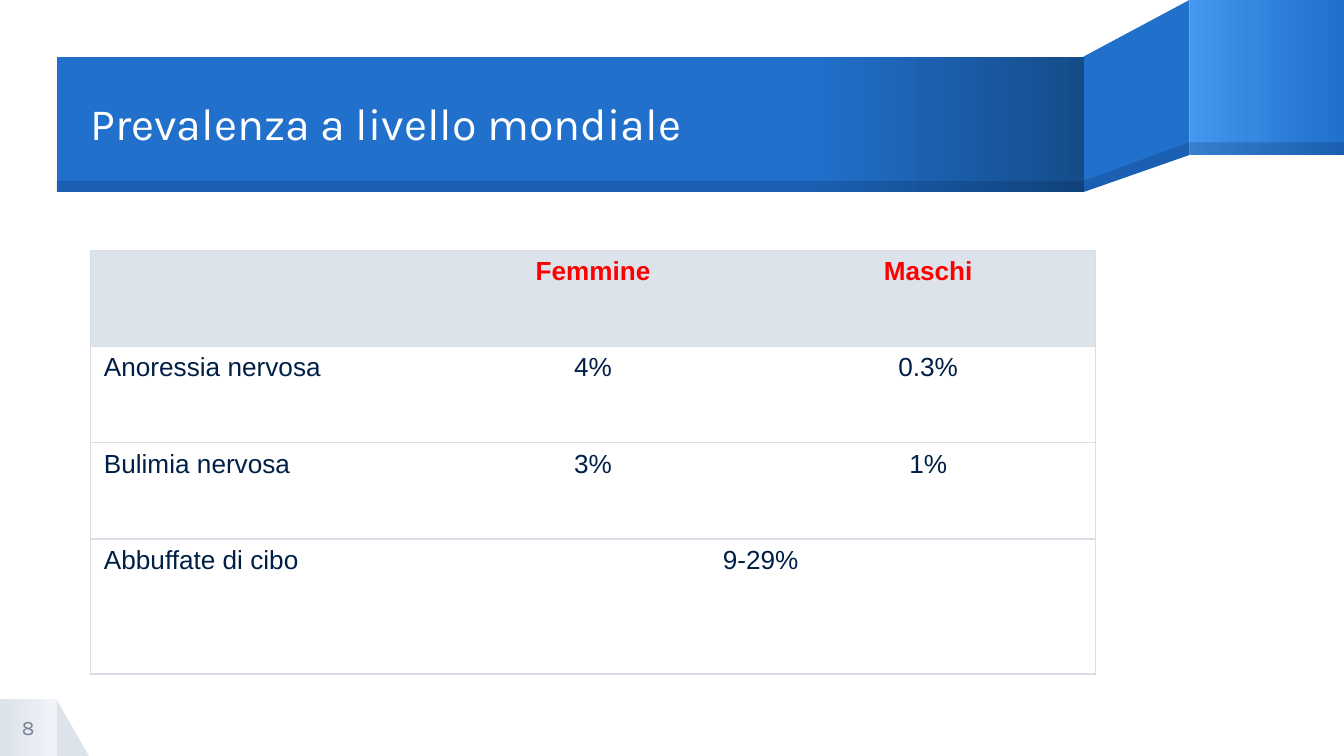
from dataclasses import dataclass

from lxml import etree
from pptx import Presentation
from pptx import util as u
from pptx.dml.color import RGBColor
from pptx.enum import shapes, text
from pptx.oxml import ns

WHITE = RGBColor(0xFF, 0xFF, 0xFF)
BLUE = RGBColor(0x21, 0x70, 0xCC)
LIGHT_BLUE = RGBColor(0x43, 0x97, 0xEE)
DARK_BLUE = RGBColor(0x15, 0x4C, 0x8A)
NAVY = RGBColor(0x00, 0x1F, 0x46)
RED = RGBColor(0xFF, 0x00, 0x00)
GREY = RGBColor(0xDD, 0xE3, 0xEB)
PALE_GREY = RGBColor(0xF0, 0xF3, 0xF7)
RULE_GREY = RGBColor(0xD8, 0xDE, 0xE6)
NUMBER_GREY = RGBColor(0x74, 0x83, 0x94)

# Ribbon guides, in centimetres
PAGE_WIDTH, PAGE_HEIGHT = 25.4, 14.29
MARGIN = 1.07
FOLD_LEFT, FOLD_RIGHT = 20.48, 22.48
BAND_BOTTOM, TAB_BOTTOM = 3.63, 2.93
BAND_EDGE, TAB_EDGE = 3.42, 2.69
FOOT_TOP = PAGE_HEIGHT - MARGIN


@dataclass
class Paint:
    stops: list[tuple[int, RGBColor]]  # percent, colour; one stop means solid
    alpha: int = 100


@dataclass
class Panel:
    corners: list[tuple[float, float]]
    paint: Paint
    preset: shapes.MSO_SHAPE | None = shapes.MSO_SHAPE.RECTANGLE


def add_colour(parent, colour: RGBColor, alpha: int = 100) -> None:
    node = etree.SubElement(parent, ns.qn("a:srgbClr"), val=str(colour))
    if alpha < 100:
        etree.SubElement(node, ns.qn("a:alpha"), val=str(alpha * 1000))


def apply_paint(shape, paint: Paint) -> None:
    shape.shadow.inherit = False
    shape.line.fill.background()
    if len(paint.stops) > 1:
        shape.fill.gradient()
        shape.fill.gradient_angle = 0
        stop_list = shape._element.spPr.find(".//" + ns.qn("a:gsLst"))
        for stop in list(stop_list):
            stop_list.remove(stop)
        for percent, colour in paint.stops:
            stop = etree.SubElement(stop_list, ns.qn("a:gs"), pos=str(percent * 1000))
            add_colour(stop, colour)
    else:
        shape.fill.solid()
        shape.fill.fore_color.rgb = paint.stops[0][1]
        solid = shape._element.spPr.find(ns.qn("a:solidFill"))
        solid.remove(solid[0])
        add_colour(solid, paint.stops[0][1], paint.alpha)


def draw_panel(page, panel: Panel) -> None:
    points = [(u.Cm(x), u.Cm(y)) for x, y in panel.corners]
    if panel.preset is None:
        builder = page.shapes.build_freeform(*points[0])
        builder.add_line_segments(points[1:], close=True)
        shape = builder.convert_to_shape()
    else:
        (left, top), (right, bottom) = points
        shape = page.shapes.add_shape(panel.preset, left, top, right - left, bottom - top)
    apply_paint(shape, panel.paint)


def write(frame, words: str, *, size: float, colour: RGBColor, font: str = "Arial",
          bold: bool = False, align=text.PP_ALIGN.LEFT, spacing: float = 1.0) -> None:
    para = frame.paragraphs[0]
    para.alignment = align
    para.line_spacing = spacing
    span = para.add_run()
    span.text = words
    span.font.size = u.Pt(size)
    span.font.name = font
    span.font.bold = bold
    span.font.color.rgb = colour


def clear_insets(frame) -> None:
    frame.margin_left = frame.margin_right = frame.margin_top = frame.margin_bottom = 0
    frame.vertical_anchor = text.MSO_ANCHOR.MIDDLE
    frame.word_wrap = True
    frame.auto_size = text.MSO_AUTO_SIZE.NONE


def set_borders(cell, visible: str) -> None:
    props = cell._tc.get_or_add_tcPr()
    for index, side in enumerate("LRTB"):
        line = etree.Element(ns.qn(f"a:ln{side}"), w=str(u.Pt(0.75)))
        if side in visible:
            add_colour(etree.SubElement(line, ns.qn("a:solidFill")), RULE_GREY)
        else:
            etree.SubElement(line, ns.qn("a:noFill"))
        props.insert(index, line)


def draw_table(page, rows: list[list[str]], heights: list[float]) -> None:
    columns = len(rows[0])
    frame = page.shapes.add_table(len(rows), columns, u.Cm(1.71), u.Cm(4.73),
                                  u.Cm(19), u.Cm(sum(heights)))
    table = frame.table
    for row, height in zip(table.rows, heights):
        row.height = u.Cm(height)
    table.cell(3, 1).merge(table.cell(3, 2))
    for r, row in enumerate(rows):
        for c, words in enumerate(row):
            cell = table.cell(r, c)
            header = r == 0
            if header:
                cell.fill.solid()
                cell.fill.fore_color.rgb = GREY
            else:
                cell.fill.background()
            at_right = c == columns - 1 or cell.is_merge_origin
            set_borders(cell, "TB" + "L" * (c == 0) + "R" * at_right)
            if words:
                write(cell.text_frame, words, size=14, bold=header,
                      colour=RED if header else NAVY,
                      align=text.PP_ALIGN.CENTER if c else text.PP_ALIGN.LEFT)


SHADE = Paint([(0, NAVY)], alpha=20)
PANELS = [
    # Page number corner
    Panel([(MARGIN, FOOT_TOP), (1.68, PAGE_HEIGHT)], Paint([(0, GREY)]),
          shapes.MSO_SHAPE.RIGHT_TRIANGLE),
    Panel([(0, FOOT_TOP), (MARGIN, PAGE_HEIGHT)], Paint([(0, GREY), (100, PALE_GREY)])),
    # Folded ribbon
    Panel([(FOLD_RIGHT, 0), (FOLD_LEFT, MARGIN), (FOLD_LEFT, BAND_BOTTOM),
           (FOLD_RIGHT, TAB_BOTTOM)], Paint([(0, BLUE)]), None),
    Panel([(FOLD_RIGHT, 0), (PAGE_WIDTH, TAB_BOTTOM)],
          Paint([(0, LIGHT_BLUE), (100, BLUE)])),
    Panel([(MARGIN, MARGIN), (FOLD_LEFT, BAND_BOTTOM)],
          Paint([(0, BLUE), (73, BLUE), (100, DARK_BLUE)])),
    # Shaded lower edge of the ribbon
    Panel([(FOLD_RIGHT, TAB_EDGE), (FOLD_LEFT, BAND_EDGE), (FOLD_LEFT, BAND_BOTTOM),
           (FOLD_RIGHT, TAB_BOTTOM)], SHADE, None),
    Panel([(FOLD_RIGHT, TAB_EDGE), (PAGE_WIDTH, TAB_BOTTOM)], SHADE),
    Panel([(MARGIN, BAND_EDGE), (FOLD_LEFT, BAND_BOTTOM)], SHADE),
]
ROWS = [
    ["", "Femmine", "Maschi"],
    ["Anoressia nervosa", "4%", "0.3%"],
    ["Bulimia nervosa", "3%", "1%"],
    ["Abbuffate di cibo", "9-29%", ""],
]


def main() -> None:
    deck = Presentation()
    deck.slide_width, deck.slide_height = u.Cm(PAGE_WIDTH), u.Cm(PAGE_HEIGHT)
    page = deck.slides.add_slide(deck.slide_layouts[5])
    for panel in PANELS:
        draw_panel(page, panel)

    # Title, brought in front of the ribbon
    title = page.shapes.title
    title.left, title.top = u.Cm(1.71), u.Cm(1.09)
    title.width, title.height = u.Cm(18.77), u.Cm(2.57)
    page.shapes._spTree.append(title._element)
    clear_insets(title.text_frame)
    write(title.text_frame, "Prevalenza a livello mondiale", size=24, colour=WHITE,
          font="Karla", spacing=0.9)

    # Page number
    box = page.shapes.add_textbox(0, u.Cm(FOOT_TOP), u.Cm(MARGIN), u.Cm(MARGIN))
    clear_insets(box.text_frame)
    write(box.text_frame, "8", size=11, colour=NUMBER_GREY, font="Karla",
          align=text.PP_ALIGN.CENTER)

    draw_table(page, ROWS, [1.82, 1.82, 1.82, 2.55])
    deck.save("out.pptx")


if __name__ == "__main__":
    main()
